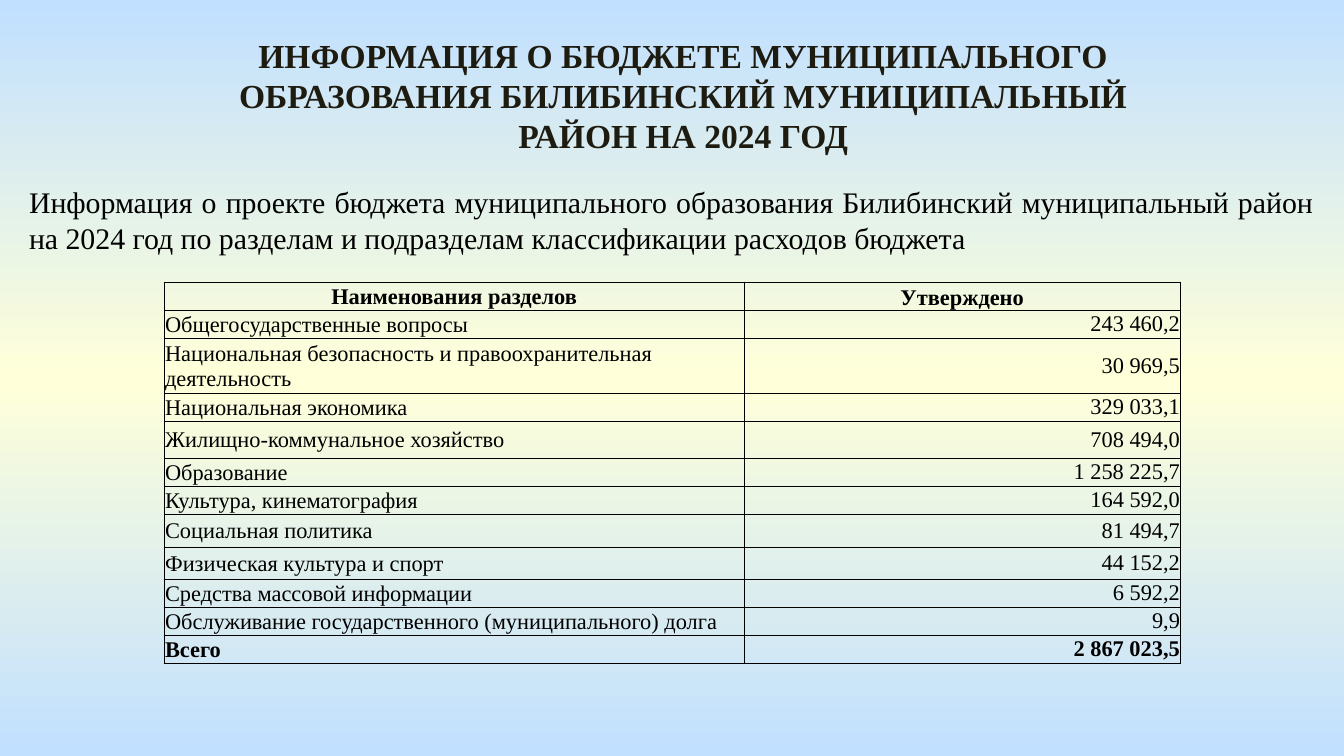
from copy import deepcopy
from dataclasses import dataclass

from lxml.etree import SubElement
from pptx import Presentation
from pptx.dml.color import RGBColor
from pptx.enum.text import MSO_ANCHOR, PP_ALIGN
from pptx.oxml.ns import qn
from pptx.slide import Slide
from pptx.table import _Cell
from pptx.text.text import TextFrame
from pptx.util import Cm, Pt

FONT = "Times New Roman"
BLACK = RGBColor(0x00, 0x00, 0x00)
TITLE_COLOR = RGBColor(0x1E, 0x1C, 0x11)
SKY = RGBColor(0xC1, 0xE0, 0xFF)
CREAM = RGBColor(0xFF, 0xFF, 0xD9)

LINE_ROW = 0.53  # height of a one-line table row, cm


@dataclass
class BudgetRow:
    section: str
    amount: str
    height: float = LINE_ROW
    bold: bool = False


HEADER = BudgetRow("Наименования разделов", "Утверждено", bold=True)
BUDGET = [
    BudgetRow("Общегосударственные вопросы", "243 460,2"),
    BudgetRow("Национальная безопасность и правоохранительная деятельность",
              "30 969,5", height=1.04),
    BudgetRow("Национальная экономика", "329 033,1"),
    BudgetRow("Жилищно-коммунальное хозяйство", "708 494,0", height=0.7),
    BudgetRow("Образование", "1 258 225,7"),
    BudgetRow("Культура, кинематография", "164 592,0"),
    BudgetRow("Социальная политика", "81 494,7", height=0.62),
    BudgetRow("Физическая культура и спорт", "44 152,2", height=0.61),
    BudgetRow("Средства массовой информации", "6 592,2"),
    BudgetRow("Обслуживание государственного (муниципального) долга", "9,9"),
    BudgetRow("Всего", "2 867 023,5", bold=True),
]


def write(frame: TextFrame, text: str, *, size: float, color: RGBColor = BLACK,
          bold: bool = False, align: PP_ALIGN = PP_ALIGN.LEFT) -> None:
    paragraph = frame.paragraphs[0]
    paragraph.alignment = align
    run = paragraph.add_run()
    run.text = text
    run.font.name = FONT
    run.font.size = Pt(size)
    run.font.bold = bold
    run.font.color.rgb = color


def add_text(slide: Slide, text: str, left: float, top: float, width: float,
             height: float, **text_format) -> None:
    box = slide.shapes.add_textbox(Cm(left), Cm(top), Cm(width), Cm(height))
    box.text_frame.word_wrap = True
    write(box.text_frame, text, **text_format)


def paint_background(slide: Slide) -> None:
    fill = slide.background.fill
    fill.gradient()
    fill.gradient_angle = 270
    stop_list = slide.element.find(".//" + qn("a:gsLst"))
    stop_list.append(deepcopy(stop_list[-1]))
    for stop, position, color in zip(fill.gradient_stops, (0, 0.5, 1), (SKY, CREAM, SKY)):
        stop.position = position
        stop.color.rgb = color


def format_cell(cell: _Cell, inset: float, anchor: MSO_ANCHOR) -> None:
    cell.margin_left = cell.margin_right = cell.margin_top = Cm(inset)
    cell.margin_bottom = 0
    cell.vertical_anchor = anchor
    properties = cell._tc.get_or_add_tcPr()
    for side in ("a:lnL", "a:lnR", "a:lnT", "a:lnB"):
        border = SubElement(properties, qn(side), w=str(Pt(0.5)))
        solid = SubElement(border, qn("a:solidFill"))
        SubElement(solid, qn("a:srgbClr"), val=str(BLACK))
    cell.fill.background()


def add_budget_table(slide: Slide, left: float, top: float,
                     widths: tuple[float, float]) -> None:
    rows = [HEADER, *BUDGET]
    table = slide.shapes.add_table(
        len(rows), len(widths), Cm(left), Cm(top), Cm(sum(widths)),
        Cm(sum(row.height for row in rows))).table
    table.first_row = table.horz_banding = False
    for column, width in zip(table.columns, widths):
        column.width = Cm(width)
    for index, row in enumerate(rows):
        table.rows[index].height = Cm(row.height)
        section, amount = table.rows[index].cells
        is_header = row is HEADER
        format_cell(section, 0.02, MSO_ANCHOR.MIDDLE)
        format_cell(amount, 0.02 if is_header else 0,
                    MSO_ANCHOR.BOTTOM if is_header else MSO_ANCHOR.MIDDLE)
        write(section.text_frame, row.section, size=12, bold=row.bold,
              align=PP_ALIGN.CENTER if is_header else PP_ALIGN.LEFT)
        write(amount.text_frame, row.amount, size=12, bold=row.bold,
              align=PP_ALIGN.CENTER if is_header else PP_ALIGN.RIGHT)


def main() -> None:
    presentation = Presentation()
    presentation.slide_width, presentation.slide_height = Cm(25.4), Cm(14.29)
    slide = presentation.slides.add_slide(presentation.slide_layouts[6])
    paint_background(slide)

    # Title and introduction
    add_text(slide, "ИНФОРМАЦИЯ О БЮДЖЕТЕ МУНИЦИПАЛЬНОГО ОБРАЗОВАНИЯ "
             "БИЛИБИНСКИЙ МУНИЦИПАЛЬНЫЙ РАЙОН НА 2024 ГОД",
             3.1, 0.53, 19.63, 2.57, size=18, color=TITLE_COLOR, bold=True,
             align=PP_ALIGN.CENTER)
    add_text(slide, "Информация о проекте бюджета муниципального образования "
             "Билибинский муниципальный район на 2024 год по разделам и "
             "подразделам классификации расходов бюджета",
             0.3, 3.35, 24.79, 1.63, size=16, align=PP_ALIGN.JUSTIFY)

    # Spending by section
    add_budget_table(slide, 3.1, 5.33, (10.97, 8.23))

    presentation.save("out.pptx")


if __name__ == "__main__":
    main()
